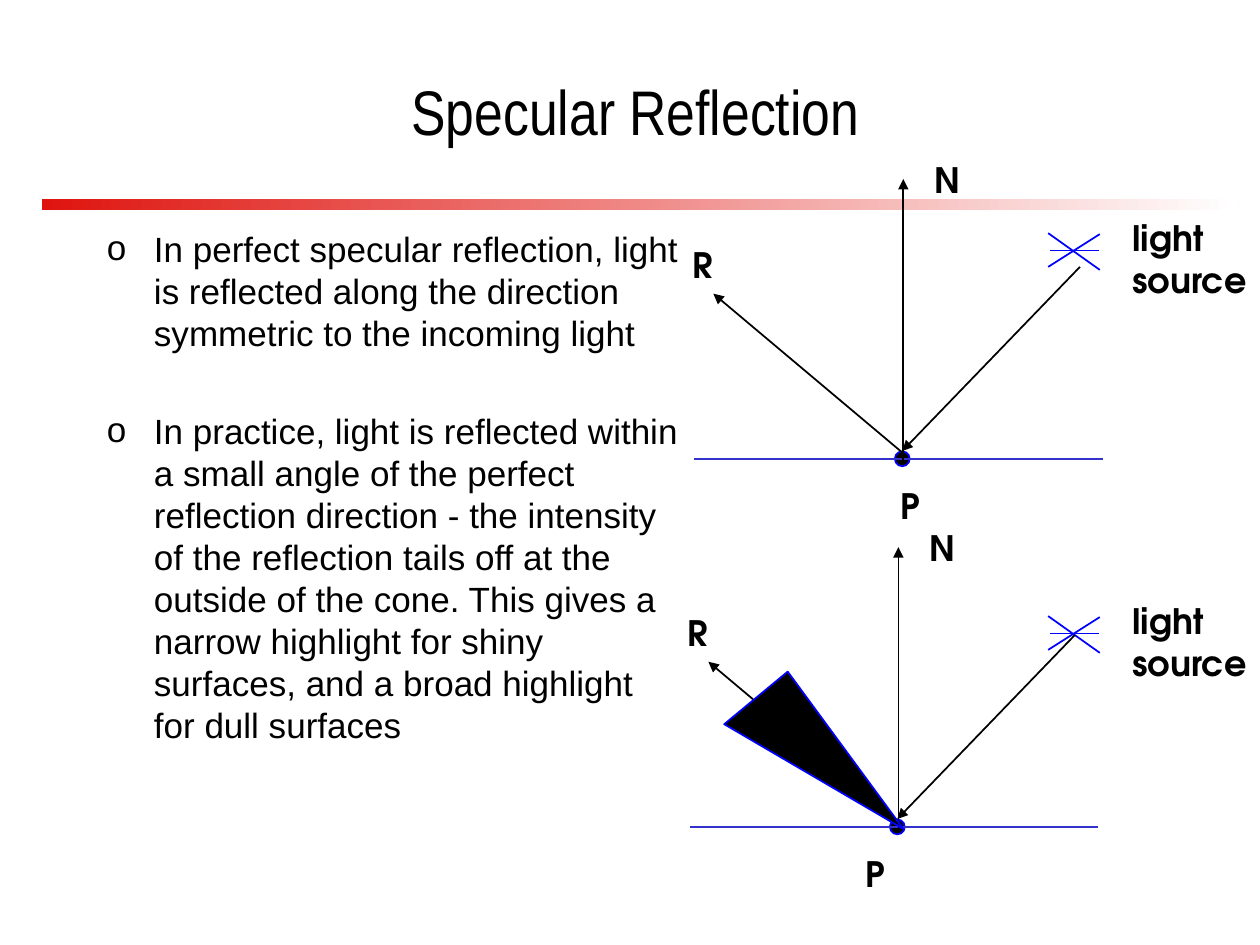
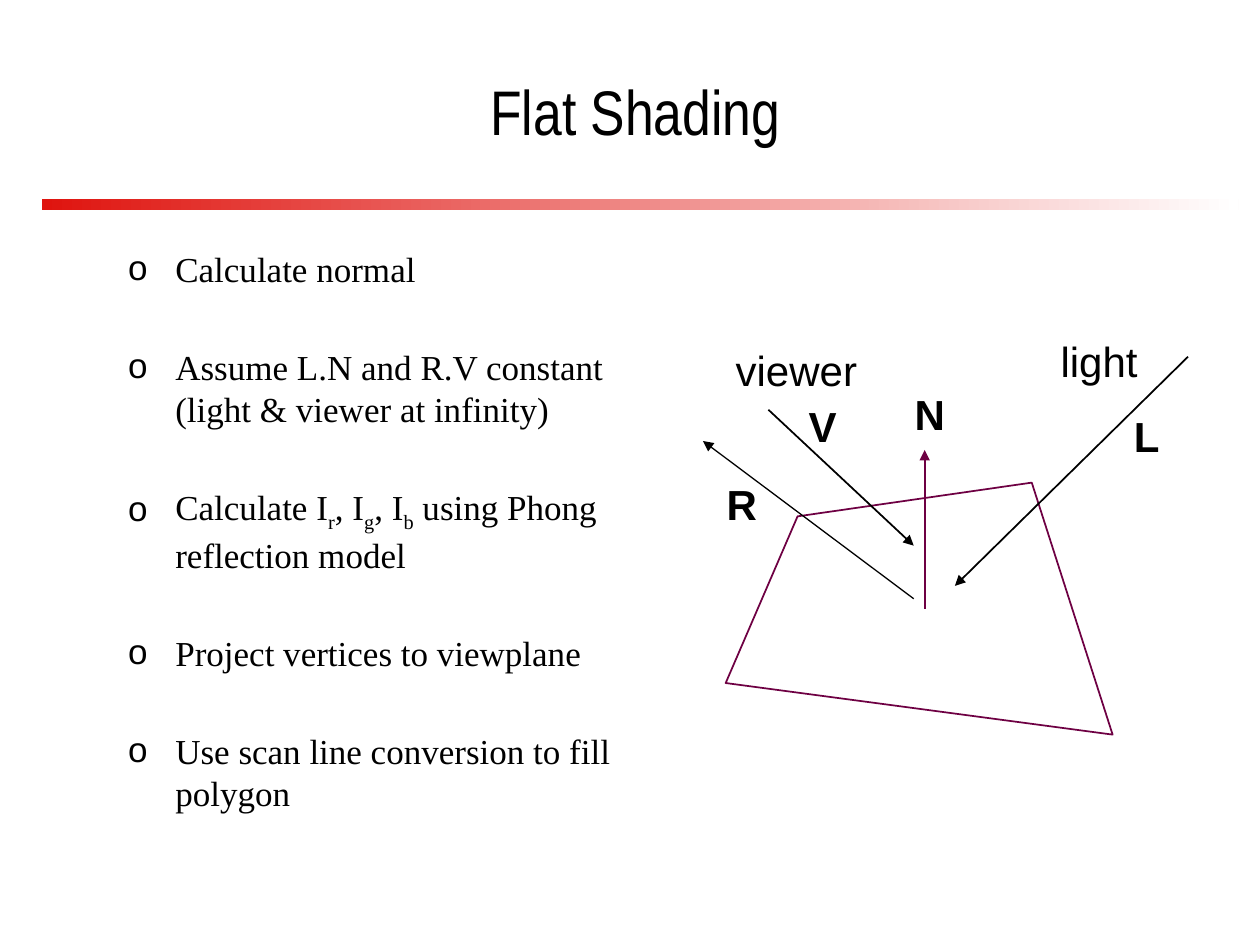
from lxml.etree import SubElement as Sub
from pptx import Presentation
from pptx.dml.color import RGBColor as Rgb
from pptx.enum.shapes import MSO_CONNECTOR as Conn, MSO_SHAPE as Shape
from pptx.enum.text import MSO_ANCHOR as Anchor, MSO_AUTO_SIZE as Fit, PP_ALIGN as Align
from pptx.oxml.ns import qn
from pptx.util import Cm, Pt

hues = {
    "ink": "000000", "paper": "FFFFFF", "band": "DF140F",
    "lamp": "0000FF", "floor": "3333CC", "plane": "6E0043",
}
hues = {name: Rgb.from_string(code) for name, code in hues.items()}


def line(slide, start, end, hue="ink", arrow=False, width=1):
    link = slide.shapes.add_connector(Conn.STRAIGHT, *map(Cm, start + end))
    link.line.color.rgb = hues[hue]
    link.line.width = Pt(width)
    props = link._element.spPr
    if arrow:
        Sub(props.find(qn("a:ln")), qn("a:tailEnd"), type="triangle")
    Sub(props, qn("a:effectLst"))


def label(slide, text, left, top, wide, high, font, size, bold=True):
    frame = slide.shapes.add_textbox(*map(Cm, (left, top, wide, high))).text_frame
    frame.word_wrap = False
    frame.text = text
    for para in frame.paragraphs:
        face = para.runs[0].font
        face.name, face.size, face.bold = font, Pt(size), bold
        face.color.rgb = hues["ink"]


deck = Presentation()
deck.slide_width, deck.slide_height = Cm(25.4), Cm(19.05)

# Title, body box, body font and list; text between underscores is subscript
pages = [
    ("Specular Reflection", (1.9, 4.45, 12.06, 12.06), "Arial", [
        "In perfect specular reflection, light is reflected along the direction "
        "symmetric to the incoming light",
        "In practice, light is reflected within a small angle of the perfect "
        "reflection direction - the intensity of the reflection tails off at the "
        "outside of the cone. This gives a narrow highlight for shiny surfaces, "
        "and a broad highlight for dull surfaces",
    ]),
    ("Flat Shading", (2.33, 4.87, 11.01, 12.06), "Times New Roman", [
        "Calculate normal",
        "Assume L.N and R.V constant (light & viewer at infinity)",
        "Calculate I_r_, I_g_, I_b_ using Phong reflection model",
        "Project vertices to viewplane",
        "Use scan line conversion to fill polygon",
    ]),
]

for head, box, font, items in pages:
    slide = deck.slides.add_slide(deck.slide_layouts[1])

    # Fading band
    band = slide.shapes.add_shape(Shape.RECTANGLE, Cm(0.84), Cm(4.02), Cm(24.13), Cm(0.21))
    band.shadow.inherit = False
    band.line.fill.background()
    band.fill.gradient()
    band.fill.gradient_angle = 0
    for stop, hue, spot in zip(band.fill.gradient_stops, ("band", "paper"), (0, 1)):
        stop.color.rgb = hues[hue]
        stop.position = spot

    # Title
    title = slide.shapes.title
    title.left, title.top, title.width, title.height = map(Cm, (3.39, 0.85, 18.84, 2.75))
    frame = title.text_frame
    frame.text = head
    frame.auto_size = Fit.NONE
    frame.vertical_anchor = Anchor.MIDDLE
    para = frame.paragraphs[0]
    para.alignment = Align.CENTER
    face = para.runs[0].font
    face.name, face.size = "Arial Narrow", Pt(36)
    face.color.rgb = hues["ink"]

    # List
    body = slide.placeholders[1]
    body.left, body.top, body.width, body.height = map(Cm, box)
    frame = body.text_frame
    frame.text = "\n".join(item.replace("_", "") for item in items)
    frame.auto_size = Fit.NONE
    for rank, (para, item) in enumerate(zip(frame.paragraphs, items)):
        props = para._p.get_or_add_pPr()
        props.set("marL", str(Cm(0.95)))
        props.set("indent", str(-Cm(0.95)))
        Sub(props, qn("a:buFont"), typeface="Arial")
        Sub(props, qn("a:buChar"), char="o")
        para.space_before = Pt(32 if rank else 0)
        parts = item.split("_")
        para.runs[0].text = parts[0]
        for part in parts[1:]:
            para.add_run().text = part
        for spot, run in enumerate(para.runs):
            run.font.name, run.font.size = font, Pt(20)
            run.font.color.rgb = hues["ink"]
            if spot % 2:
                run.font._element.set("baseline", "-25000")

# Specular diagrams: shift of the scene, drop of the lamp, left of P, cone or not
slide = deck.slides[0]
for dx, dy, drop, left, cone in [(-0.1, 7.42, 7.72, 17.2, True), (0, 0, 0, 17.91, False)]:
    # Surface point and surface
    dot = slide.shapes.add_shape(
        Shape.OVAL, Cm(18.04 + dx), Cm(9.1 + dy), Cm(0.3), Cm(0.3))
    dot.shadow.inherit = False
    dot.fill.solid()
    dot.fill.fore_color.rgb = hues["ink"]
    dot.line.color.rgb = hues["lamp"]
    dot.line.width = Pt(1)
    line(slide, (14 + dx, 9.25 + dy), (22.23 + dx, 9.25 + dy), "floor")

    # Lamp
    for x1, y1, x2, y2 in [(21.16, 5.05, 22.15, 5.05), (22.17, 4.72, 21.13, 5.38),
                           (22.17, 5.44, 21.13, 4.7)]:
        line(slide, (x1, y1 + drop), (x2, y2 + drop), "lamp")

    # Incoming ray, reflected ray and normal
    for x1, y1, x2, y2 in [(21.77, 5.38, 18.19, 9.09), (18.21, 9.14, 14.38, 5.92),
                           (18.21, 9.35, 18.21, 3.61)]:
        line(slide, (x1 + dx, y1 + dy), (x2 + dx, y2 + dy), arrow=True)

    # Labels
    for text, x, y, wide, high in [
            ("P", left, 9.65 + dy, 0.89, 1.09),
            ("light\nsource", 22.58, 4.24 + drop, 2.82, 1.93),
            ("N", 18.59 + dx, 3.07 + dy, 1.02, 1.09),
            ("R", 13.72 + dx, 4.78 + dy, 0.91, 1.09)]:
        label(slide, text, x, y, wide, high, "TeX Gyre Adventor", 20)

    # Cone of reflection
    if cone:
        pen = slide.shapes.build_freeform(Cm(14.6), Cm(14.6))
        pen.add_line_segments([(Cm(18.21), Cm(16.71)), (Cm(15.88), Cm(13.54))])
        wedge = pen.convert_to_shape()
        wedge.shadow.inherit = False
        wedge.fill.solid()
        wedge.fill.fore_color.rgb = hues["ink"]
        wedge.line.color.rgb = hues["lamp"]
        wedge.line.width = Pt(1)

# Flat polygon
slide = deck.slides[1]
pen = slide.shapes.build_freeform(Cm(14.63), Cm(13.77))
pen.add_line_segments([(Cm(x), Cm(y)) for x, y in [(16.08, 10.41), (20.8, 9.73), (22.43, 14.81)]])
plane = pen.convert_to_shape()
plane.shadow.inherit = False
plane.fill.background()
plane.line.color.rgb = hues["plane"]
plane.line.width = Pt(1)

# Normal, light, view and reflection vectors
for start, end, hue, width in [
        ((18.64, 12.27), (18.64, 9.07), "plane", 1),
        ((23.95, 7.19), (19.25, 11.81), "ink", 1),
        ((15.49, 8.26), (18.42, 11), "ink", 1),
        ((18.42, 12.07), (14.17, 8.89), "ink", 0.75)]:
    line(slide, start, end, hue, True, width)

# Vector names
for text, x, y, wide, bold in [
        ("N", 18.19, 7.7, 1.12, True), ("L", 22.61, 8.15, 1.02, True),
        ("V", 16.05, 7.95, 1.07, True), ("R", 14.4, 9.53, 1.12, True),
        ("light", 21.13, 6.63, 2.06, False), ("viewer", 14.58, 6.83, 2.95, False)]:
    label(slide, text, x, y, wide, 1.27, "Arial", 24, bold)

deck.save("out.pptx")
